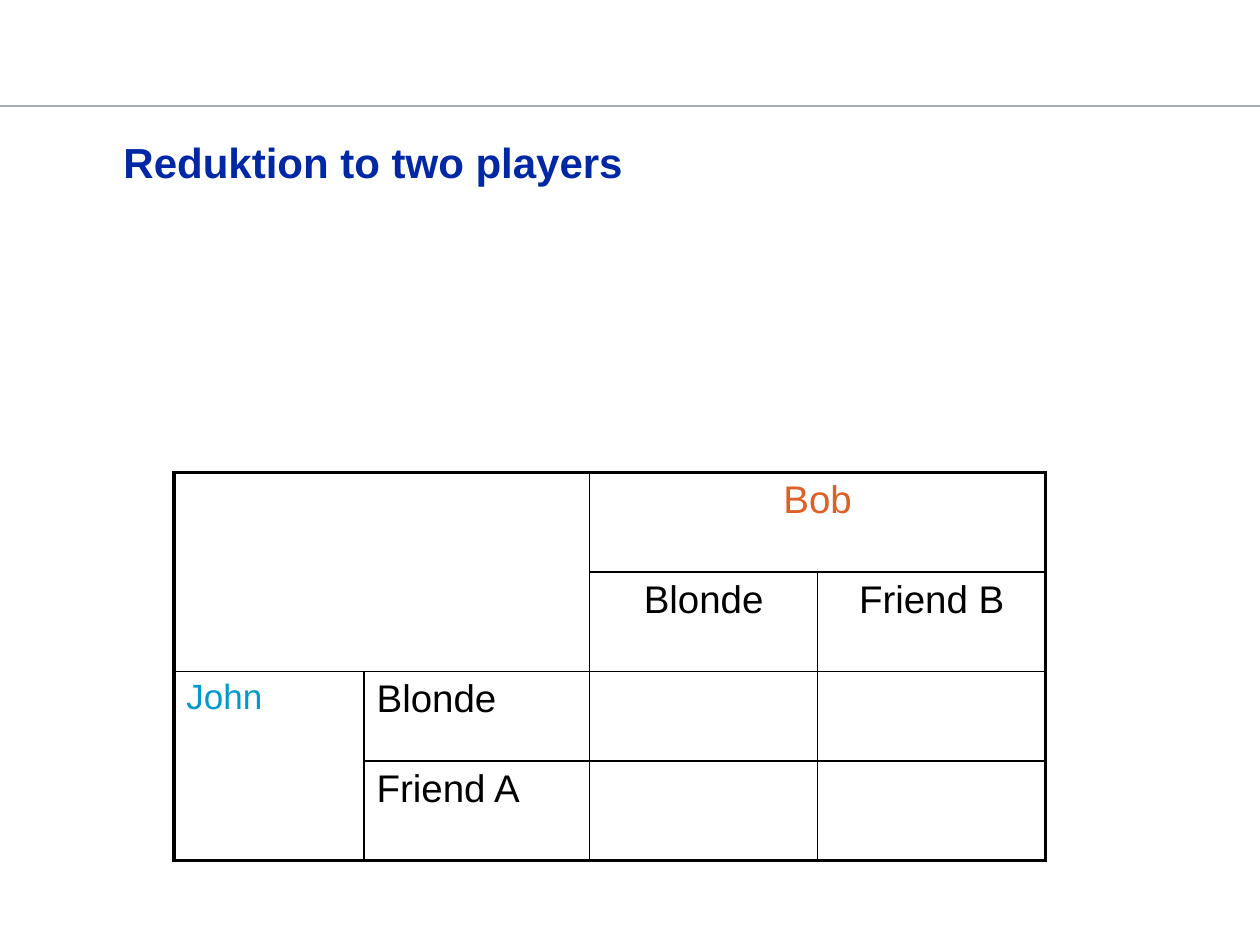
"""Build a slide with an empty two-player payoff table."""
import pptx
import pptx.dml.color
import pptx.enum.shapes
import pptx.enum.text
import pptx.oxml
import pptx.oxml.ns
import pptx.util
from lxml import etree

Inches = pptx.util.Inches
Pt = pptx.util.Pt
RGBColor = pptx.dml.color.RGBColor
PP_ALIGN = pptx.enum.text.PP_ALIGN

BLUE = RGBColor(0x00, 0x28, 0xA5)
GREY = RGBColor(0xA3, 0xAD, 0xB7)
ORANGE = RGBColor(0xDC, 0x60, 0x27)
CYAN = RGBColor(0x00, 0x99, 0xCC)
BLACK = RGBColor(0x00, 0x00, 0x00)

FONT = "Arial"
COL_WIDTHS = (1.51, 1.79, 1.81, 1.81)
ROW_HEIGHTS = (0.79, 0.79, 0.71, 0.79)
MERGES = (((0, 0), (1, 1)), ((0, 2), (0, 3)), ((2, 0), (3, 0)))
LABELS = (
    (0, 2, "Bob", 22, ORANGE, PP_ALIGN.CENTER),
    (1, 2, "Blonde", 22, BLACK, PP_ALIGN.CENTER),
    (1, 3, "Friend B", 22, BLACK, PP_ALIGN.CENTER),
    (2, 0, "John", 20, CYAN, PP_ALIGN.LEFT),
    (2, 1, "Blonde", 22, BLACK, PP_ALIGN.LEFT),
    (3, 1, "Friend A", 22, BLACK, PP_ALIGN.LEFT),
)
OUTER, INNER = 2.25, 1


def write(tf, text, size, color, align=PP_ALIGN.LEFT, bold=False):
    """Set one formatted paragraph in a text frame."""
    tf.text = text
    p = tf.paragraphs[0]
    p.alignment = align
    font = p.runs[0].font
    font.name, font.size, font.bold = FONT, Pt(size), bold
    font.color.rgb = color


def add_rule(s, y, width):
    """Draw the horizontal rule across the slide."""
    line = s.shapes.add_connector(
        pptx.enum.shapes.MSO_CONNECTOR.STRAIGHT, 0, Inches(y), width, Inches(y))
    line.line.color.rgb = GREY
    line.line.width = Pt(1.25)
    etree.SubElement(line._element.spPr, pptx.oxml.ns.qn("a:effectLst"))


def set_title(s, text):
    """Place and format the title placeholder."""
    sp = s.shapes.title
    sp.left, sp.top = Inches(0.98), Inches(0.99)
    sp.width, sp.height = Inches(8.03), Inches(0.55)
    tf = sp.text_frame
    tf.margin_left = tf.margin_right = tf.margin_bottom = 0
    tf.margin_top = Inches(0.04)
    tf.vertical_anchor = pptx.enum.text.MSO_ANCHOR.MIDDLE
    write(tf, text, 24, BLUE, bold=True)


def set_borders(cell, widths):
    """Give a cell black borders from a mapping of side to points."""
    tcPr = cell._tc.get_or_add_tcPr()
    for i, (side, width) in enumerate(widths.items()):
        tcPr.insert(i, pptx.oxml.parse_xml(
            f'<a:ln{side} {pptx.oxml.ns.nsdecls("a")} w="{Pt(width)}">'
            f'<a:solidFill><a:srgbClr val="{BLACK}"/></a:solidFill></a:ln{side}>'))


def add_payoff_table(s):
    """Add the table with merged headers and a heavy outer frame."""
    n_rows, n_cols = len(ROW_HEIGHTS), len(COL_WIDTHS)
    table = s.shapes.add_table(
        n_rows, n_cols, Inches(1.38), Inches(3.75),
        Inches(sum(COL_WIDTHS)), Inches(sum(ROW_HEIGHTS))).table
    table.first_row = table.horz_banding = False
    for col, width in zip(table.columns, COL_WIDTHS):
        col.width = Inches(width)
    for row, height in zip(table.rows, ROW_HEIGHTS):
        row.height = Inches(height)
    for (r1, c1), (r2, c2) in MERGES:
        table.cell(r1, c1).merge(table.cell(r2, c2))
    for r in range(n_rows):
        for c in range(n_cols):
            cell = table.cell(r, c)
            cell.fill.background()
            last_row = r + (cell.span_height if cell.is_merge_origin else 1)
            last_col = c + (cell.span_width if cell.is_merge_origin else 1)
            edges = {"L": c == 0, "R": last_col == n_cols,
                     "T": r == 0, "B": last_row == n_rows}
            set_borders(cell, {side: OUTER if outer else INNER
                               for side, outer in edges.items()})
    for r, c, text, size, color, align in LABELS:
        write(table.cell(r, c).text_frame, text, size, color, align)


def main():
    """Build and save the presentation."""
    prs = pptx.Presentation()
    prs.slide_width, prs.slide_height = Inches(10), Inches(7.5)
    s = prs.slides.add_slide(prs.slide_layouts[5])
    add_rule(s, 0.84, prs.slide_width)
    set_title(s, "Reduktion to two players")
    add_payoff_table(s)
    prs.save("out.pptx")


if __name__ == "__main__":
    main()
